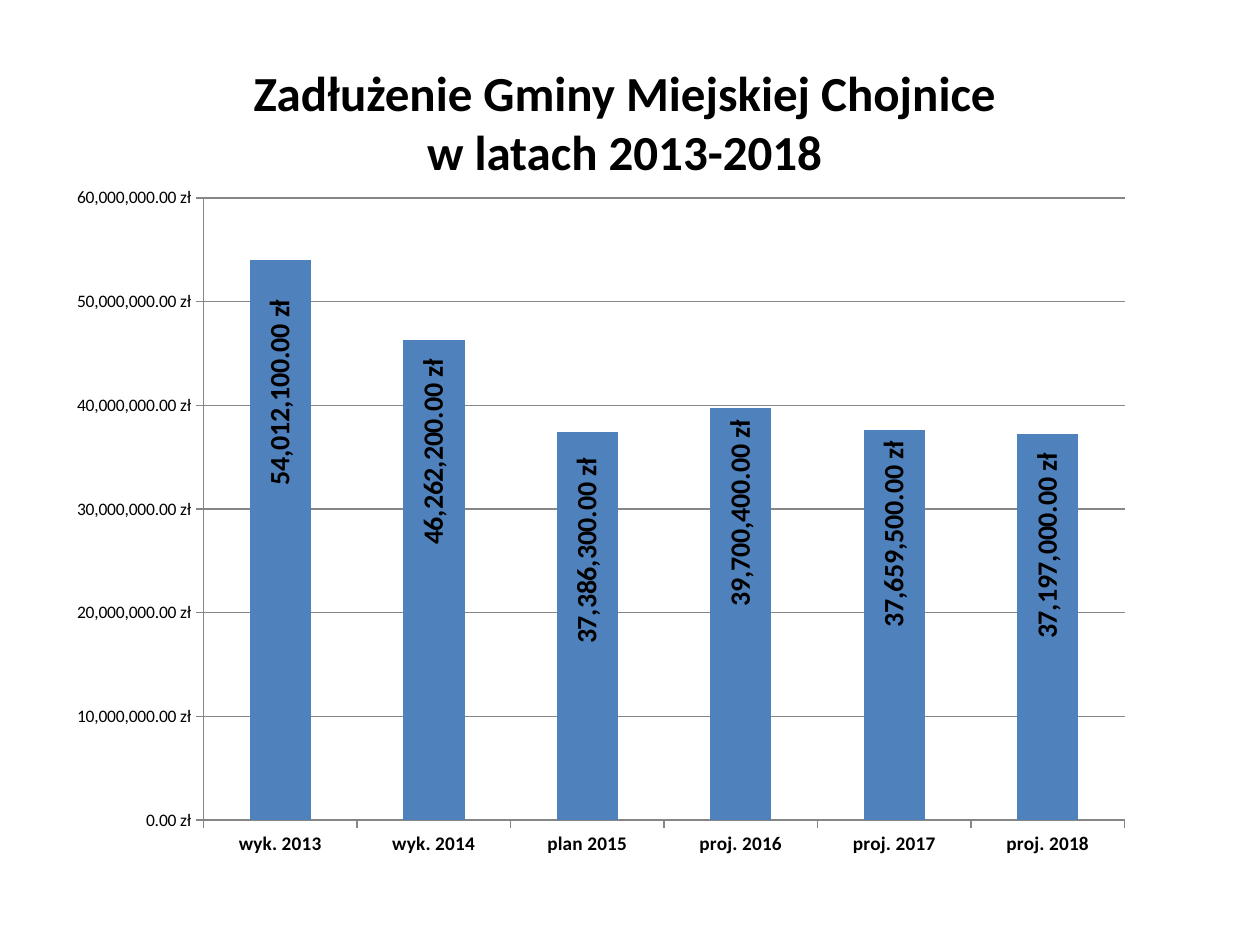
"""Build a slide with a column chart of a town's debt by year."""
from dataclasses import dataclass

from lxml.etree import SubElement
from pptx import Presentation
from pptx.chart.chart import Chart
from pptx.chart.data import CategoryChartData as Data
from pptx.dml.color import RGBColor as Rgb
from pptx.enum.chart import XL_CHART_TYPE as Kind, XL_LABEL_POSITION as Spot, XL_TICK_MARK as Tick
from pptx.enum.text import MSO_ANCHOR as Anchor, MSO_AUTO_SIZE as Fit, PP_ALIGN as Align
from pptx.oxml import parse_xml
from pptx.oxml.ns import nsdecls, qn
from pptx.text.text import Font
from pptx.util import Cm, Pt


@dataclass(frozen=True)
class Theme:
    """Colours, type and number format."""
    face: str = "Calibri"
    ink: str = "000000"
    bar: str = "4F81BD"
    grid: str = "868686"
    title: int = 28
    label: int = 16
    year: int = 11
    tick: int = 10
    money: str = '#,##0.00\\ "zł"'


@dataclass(frozen=True)
class Bar:
    """One year: its name, its debt and how far its label drops."""
    name: str
    debt: int
    drop: float


LOOK = Theme()
BARS = [
    Bar("wyk. 2013", 54012100, 0.05),
    Bar("wyk. 2014", 46262200, 0.02),
    Bar("plan 2015", 37386300, 0.03),
    Bar("proj. 2016", 39700400, 0.01),
    Bar("proj. 2017", 37659500, 0.01),
    Bar("proj. 2018", 37197000, 0.02),
]


def style(font: Font, size: int, bold: bool = False) -> None:
    """Give a font the theme's face and ink."""
    font.name, font.size, font.bold = LOOK.face, Pt(size), bold
    font.color.rgb = Rgb.from_string(LOOK.ink)


def write(frame, text: str, *, size: int, bold: bool = False, align=Align.CENTER) -> None:
    """Put formatted text in a frame."""
    frame.word_wrap, frame.auto_size = True, Fit.NONE
    frame.vertical_anchor = Anchor.MIDDLE
    para = frame.paragraphs[0]
    para.text, para.alignment = text, align
    for run in para.runs:
        style(run.font, size, bold)


def place(**parts) -> object:
    """Make a manual chart layout."""
    layout = parse_xml(f"<c:layout {nsdecls('c')}/>")
    box = SubElement(layout, qn("c:manualLayout"))
    for tag, val in parts.items():
        SubElement(box, qn(f"c:{tag}")).set("val", str(val))
    return layout


def rule(line) -> None:
    """Draw an axis or grid line."""
    line.color.rgb, line.width = Rgb.from_string(LOOK.grid), Pt(0.75)


def label(chart: Chart) -> None:
    """Show each value upright inside its bar, without leader lines."""
    points = chart.plots[0].series[0].points
    for i in range(len(BARS)):
        tag = points[i].data_label
        style(tag.font, LOOK.label, True)
        tag.position = Spot.INSIDE_END
    for line in chart.element.iter(qn("c:showLeaderLines")):
        line.set("val", "0")
    for node, bar in zip(chart.element.iter(qn("c:dLbl")), BARS):
        body = node.find(f".//{qn('a:bodyPr')}")
        body.set("rot", "-5400000")
        body.set("vert", "horz")
        form = parse_xml(f"<c:numFmt {nsdecls('c')} sourceLinked='0'/>")
        form.set("formatCode", LOOK.money)
        node.insert(1, place(x=0, y=bar.drop))
        node.insert(2, form)


def axes(chart: Chart) -> None:
    """Format both axes."""
    cat, val = chart.category_axis, chart.value_axis
    for axis in (cat, val):
        axis.major_tick_mark, axis.minor_tick_mark = Tick.OUTSIDE, Tick.NONE
        rule(axis.format.line)
    style(cat.tick_labels.font, LOOK.year, True)
    style(val.tick_labels.font, LOOK.tick)
    val.minimum_scale, val.maximum_scale, val.major_unit = 0, 60_000_000, 10_000_000
    val.has_major_gridlines = True
    rule(val.major_gridlines.format.line)
    val.tick_labels.number_format = LOOK.money
    val.tick_labels.number_format_is_linked = False


def plot(slide) -> None:
    """Add the debt chart."""
    data = Data(number_format=LOOK.money)
    data.categories = [bar.name for bar in BARS]
    data.add_series("Series 1", [bar.debt for bar in BARS])
    chart = slide.shapes.add_chart(
        Kind.COLUMN_CLUSTERED, Cm(1.09), Cm(3.53), Cm(22), Cm(14), data).chart
    chart.has_title = chart.has_legend = False
    style(chart.font, LOOK.tick)
    axes(chart)
    cols = chart.plots[0]
    cols.gap_width, cols.vary_by_categories = 150, False
    fill = cols.series[0].format.fill
    fill.solid()
    fill.fore_color.rgb = Rgb.from_string(LOOK.bar)
    label(chart)
    area = chart.element.find(f".//{qn('c:plotArea')}")
    for old in area.findall(qn("c:layout")):
        area.remove(old)
    area.insert(0, place(layoutTarget="inner", xMode="edge", yMode="edge",
                         x=0.137, y=0.033, w=0.844, h=0.896))


def main() -> None:
    """Build and save the slide."""
    deck = Presentation()
    deck.slide_width, deck.slide_height = Cm(25.4), Cm(19.05)
    slide = deck.slides.add_slide(deck.slide_layouts[5])
    head = slide.shapes.title
    head.left, head.top, head.width, head.height = Cm(1.2), Cm(0.74), Cm(22.78), Cm(3.4)
    write(head.text_frame, "Zadłużenie Gminy Miejskiej Chojnice\vw latach 2013-2018",
          size=LOOK.title, bold=True)
    plot(slide)
    deck.save("out.pptx")


if __name__ == "__main__":
    main()
